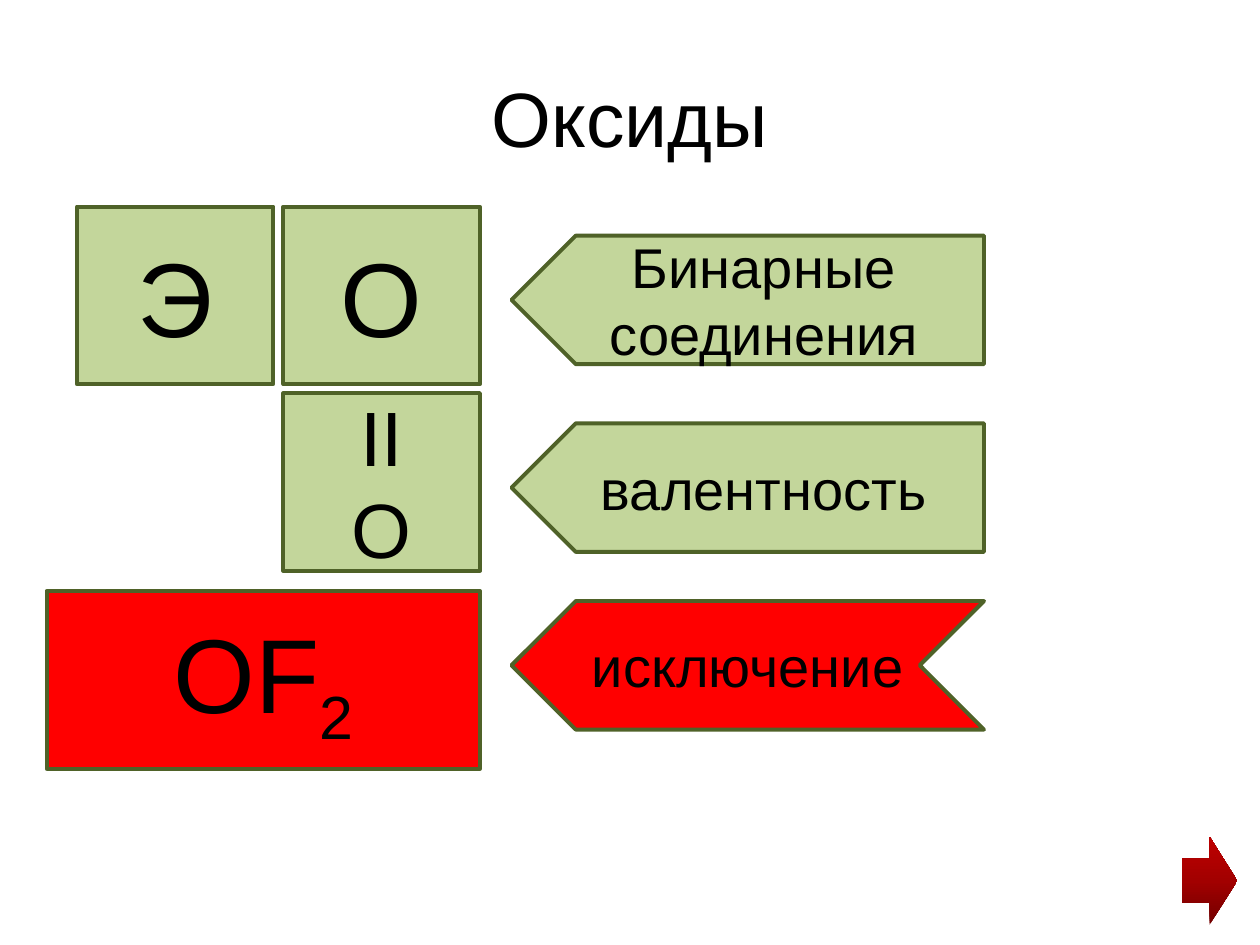
from copy import deepcopy

from pptx import Presentation
from pptx.dml.color import RGBColor
from pptx.enum.shapes import MSO_SHAPE
from pptx.enum.text import MSO_ANCHOR, PP_ALIGN
from pptx.util import Inches, Pt

COLORS = {
    "text": "000000",
    "green": "C3D69B",
    "border": "4F6228",
    "red": "FF0000",
}
ARROW_STOPS = {0: "720000", 0.5: "A20000", 1: "C00000"}

CARD_WIDTH, CARD_HEIGHT = 1.56, 1.41
LABEL_LEFT, LABEL_WIDTH, LABEL_HEIGHT = 4.06, 3.75, 1.02


def write_text(shape, lines, size, subscript=None):
    """Centre the lines in the shape, with an optional subscript at the end."""
    frame = shape.text_frame
    frame.word_wrap = True
    frame.vertical_anchor = MSO_ANCHOR.MIDDLE
    frame.text = "\n".join(lines)
    if subscript:
        index = frame.paragraphs[-1].add_run()
        index.text = subscript
        index.font._element.set("baseline", "-25000")
    text_format = {"name": "Arial", "size": Pt(size)}
    for paragraph in frame.paragraphs:
        paragraph.alignment = PP_ALIGN.CENTER
        for run in paragraph.runs:
            for attribute, value in text_format.items():
                setattr(run.font, attribute, value)
            run.font.color.rgb = RGBColor.from_string(COLORS["text"])


def add_block(shapes, preset, box, fill):
    block = shapes.add_shape(preset, *map(Inches, box))
    block.shadow.inherit = False
    block.fill.solid()
    block.fill.fore_color.rgb = RGBColor.from_string(COLORS[fill])
    block.line.color.rgb = RGBColor.from_string(COLORS["border"])
    block.line.width = Pt(2.25)
    return block


def add_card(shapes, left, top, lines, size, fill="green", width=CARD_WIDTH, subscript=None):
    card = add_block(shapes, MSO_SHAPE.RECTANGLE, (left, top, width, CARD_HEIGHT), fill)
    write_text(card, lines, size, subscript)


def add_label(shapes, top, caption, preset=MSO_SHAPE.PENTAGON, fill="green"):
    """Add a label that points left, towards its card."""
    label = add_block(shapes, preset, (LABEL_LEFT, top, LABEL_WIDTH, LABEL_HEIGHT), fill)
    label.element.spPr.xfrm.set("flipH", "1")
    write_text(label, [caption], 32)


def add_next_arrow(shapes):
    arrow = shapes.add_shape(MSO_SHAPE.RIGHT_ARROW, *map(Inches, (9.38, 6.64, 0.44, 0.7)))
    arrow.shadow.inherit = False
    arrow.line.fill.background()
    arrow.fill.gradient()
    arrow.fill.gradient_angle = 90
    stop_list = arrow.element.spPr.xpath(".//a:gsLst")[0]
    stop_list.append(deepcopy(stop_list[0]))
    for stop, (position, color) in zip(arrow.fill.gradient_stops, ARROW_STOPS.items()):
        stop.position = position
        stop.color.rgb = RGBColor.from_string(color)


def main():
    deck = Presentation()
    deck.slide_width, deck.slide_height = Inches(10), Inches(7.5)
    shapes = deck.slides.add_slide(deck.slide_layouts[6]).shapes

    # Title
    title = shapes.add_textbox(*map(Inches, (0.5, 0.3, 9, 1.25)))
    write_text(title, ["Оксиды"], 44)

    # General formula: element and oxygen
    formula = shapes.add_group_shape().shapes
    for left, symbol in ((0.61, "Э"), (2.25, "О")):
        add_card(formula, left, 1.64, [symbol], 60)
    add_label(shapes, 1.87, "Бинарные соединения")

    # Valency of oxygen
    add_label(shapes, 3.36, "валентность")
    add_card(shapes, 2.25, 3.12, ["II", "О"], 44)

    # Exception
    add_label(shapes, 4.77, "исключение", MSO_SHAPE.CHEVRON, "red")
    add_card(shapes, 0.37, 4.69, ["OF"], 60, "red", width=3.44, subscript="2")

    # Next-slide arrow
    add_next_arrow(shapes)

    deck.save("out.pptx")


if __name__ == "__main__":
    main()
